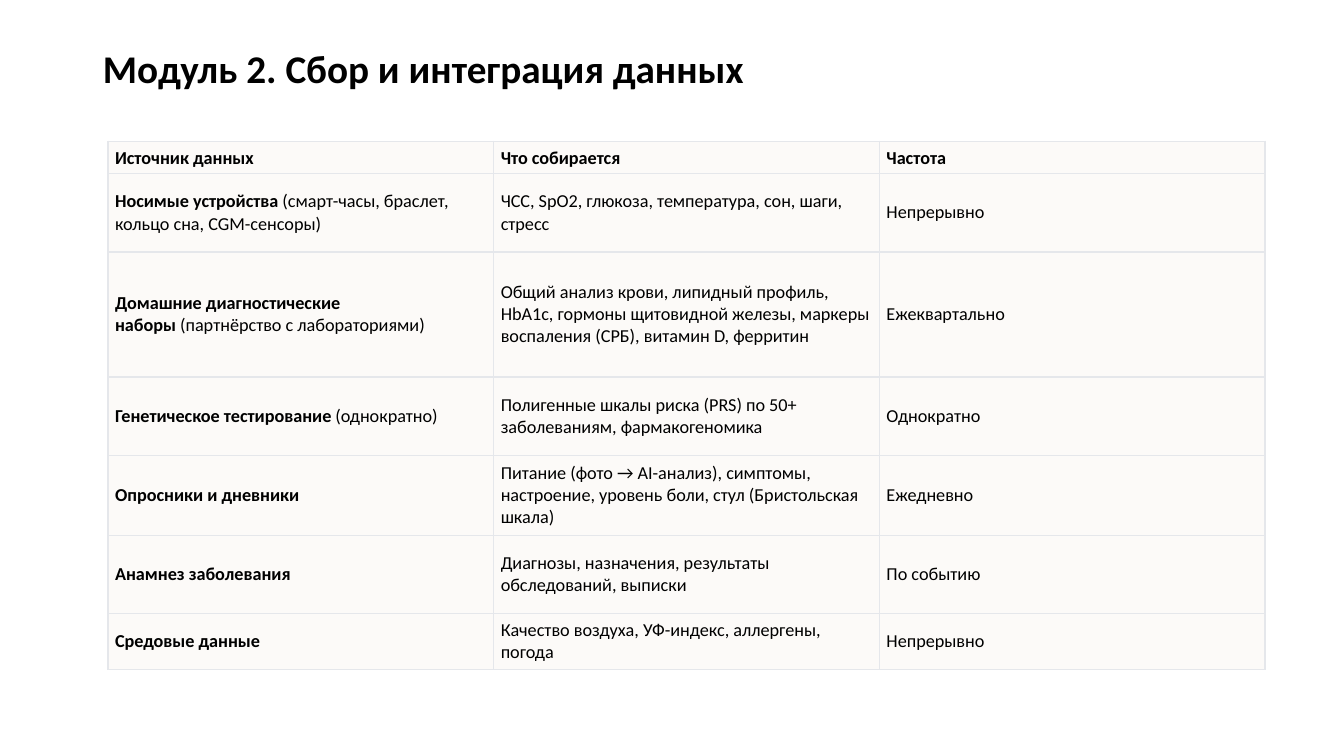
from dataclasses import dataclass

from lxml.etree import SubElement
from pptx import Presentation
from pptx.dml.color import RGBColor
from pptx.enum.text import MSO_ANCHOR as Anchor, MSO_AUTO_SIZE as Fit, PP_ALIGN as Align
from pptx.oxml.ns import qn
from pptx.util import Cm, Pt

BLACK = RGBColor(0x00, 0x00, 0x00)
CREAM = RGBColor(0xFC, 0xFA, 0xF8)
GREY = RGBColor(0xE5, 0xE7, 0xEB)
FONT = "Calibri"
NBSP = chr(160)
COL = 9.72  # column width, cm


@dataclass
class Source:
    name: str
    data: str
    rate: str
    height: float  # cm
    note: str = ""


HEAD = Source("Источник данных", "Что собирается", "Частота", 0.81)
ROWS = [
    Source("Носимые устройства", "ЧСС, SpO2, глюкоза, температура, сон, шаги, стресс",
           "Непрерывно", 1.98, "(смарт-часы, браслет, кольцо сна, CGM-сенсоры)"),
    Source("Домашние диагностические наборы",
           "Общий анализ крови, липидный профиль, HbA1c, гормоны щитовидной железы, "
           "маркеры воспаления (СРБ), витамин D, ферритин",
           "Ежеквартально", 3.15, "(партнёрство с лабораториями)"),
    Source("Генетическое тестирование",
           "Полигенные шкалы риска (PRS) по 50+ заболеваниям, фармакогеномика",
           "Однократно", 1.98, "(однократно)"),
    Source("Опросники и дневники",
           "Питание (фото → AI-анализ), симптомы, настроение, уровень боли, "
           "стул (Бристольская шкала)", "Ежедневно", 2.01),
    Source("Анамнез заболевания", "Диагнозы, назначения, результаты обследований, выписки",
           "По событию", 1.98),
    Source("Средовые данные", "Качество воздуха, УФ-индекс, аллергены, погода",
           "Непрерывно", 1.4),
]


def add_run(para, text: str, size: float, bold: bool) -> None:
    run = para.add_run()
    run.text = text
    font = run.font
    font.name, font.size, font.bold = FONT, Pt(size), bold
    font.color.rgb = BLACK


def add_edges(cell) -> None:
    """Draw a thin line on all four sides; call before the fill is set."""
    props = cell._tc.get_or_add_tcPr()
    for side in "LRTB":
        line = SubElement(props, qn(f"a:ln{side}"), w=str(Pt(1)))
        fill = SubElement(line, qn("a:solidFill"))
        SubElement(fill, qn("a:srgbClr"), val=str(GREY))


def fill_cell(cell, text: str, bold: bool, anchor: Anchor, note: str = "") -> None:
    add_edges(cell)
    cell.fill.solid()
    cell.fill.fore_color.rgb = CREAM
    cell.margin_left = cell.margin_right = Cm(0.18)
    cell.margin_top = cell.margin_bottom = Cm(0.1)
    cell.vertical_anchor = anchor
    para = cell.text_frame.paragraphs[0]
    add_run(para, text, 13, bold)
    if note:
        add_run(para, NBSP + note, 13, False)


def add_title(slide, text: str) -> None:
    title = slide.shapes.title
    title.left, title.top = Cm(2.34), Cm(1.12)
    title.width, title.height = Cm(29.21), Cm(2.44)
    frame = title.text_frame
    frame.auto_size = Fit.NONE
    frame.word_wrap = True
    frame.vertical_anchor = Anchor.TOP
    para = frame.paragraphs[0]
    para.alignment = Align.LEFT
    para.line_spacing = 0.9
    add_run(para, text, 28, True)


def add_grid(slide, head: Source, rows: list[Source]) -> None:
    items = [head, *rows]
    high = sum(item.height for item in items)
    table = slide.shapes.add_table(len(items), 3, Cm(2.72), Cm(3.56),
                                   Cm(3 * COL), Cm(high)).table
    table.first_row = table.horz_banding = False
    for col in table.columns:
        col.width = Cm(COL)
    for row, item in zip(table.rows, items):
        row.height = Cm(item.height)
        top = item is head
        anchor = Anchor.BOTTOM if top else Anchor.MIDDLE
        name, data, rate = row.cells
        fill_cell(name, item.name, True, anchor, item.note)
        fill_cell(data, item.data, top, anchor)
        fill_cell(rate, item.rate, top, anchor)


def main() -> None:
    deck = Presentation()
    deck.slide_width, deck.slide_height = Cm(33.87), Cm(19.05)
    slide = deck.slides.add_slide(deck.slide_layouts[5])  # title only
    add_title(slide, "Модуль 2. Сбор и интеграция данных")
    add_grid(slide, HEAD, ROWS)
    deck.save("out.pptx")


if __name__ == "__main__":
    main()
